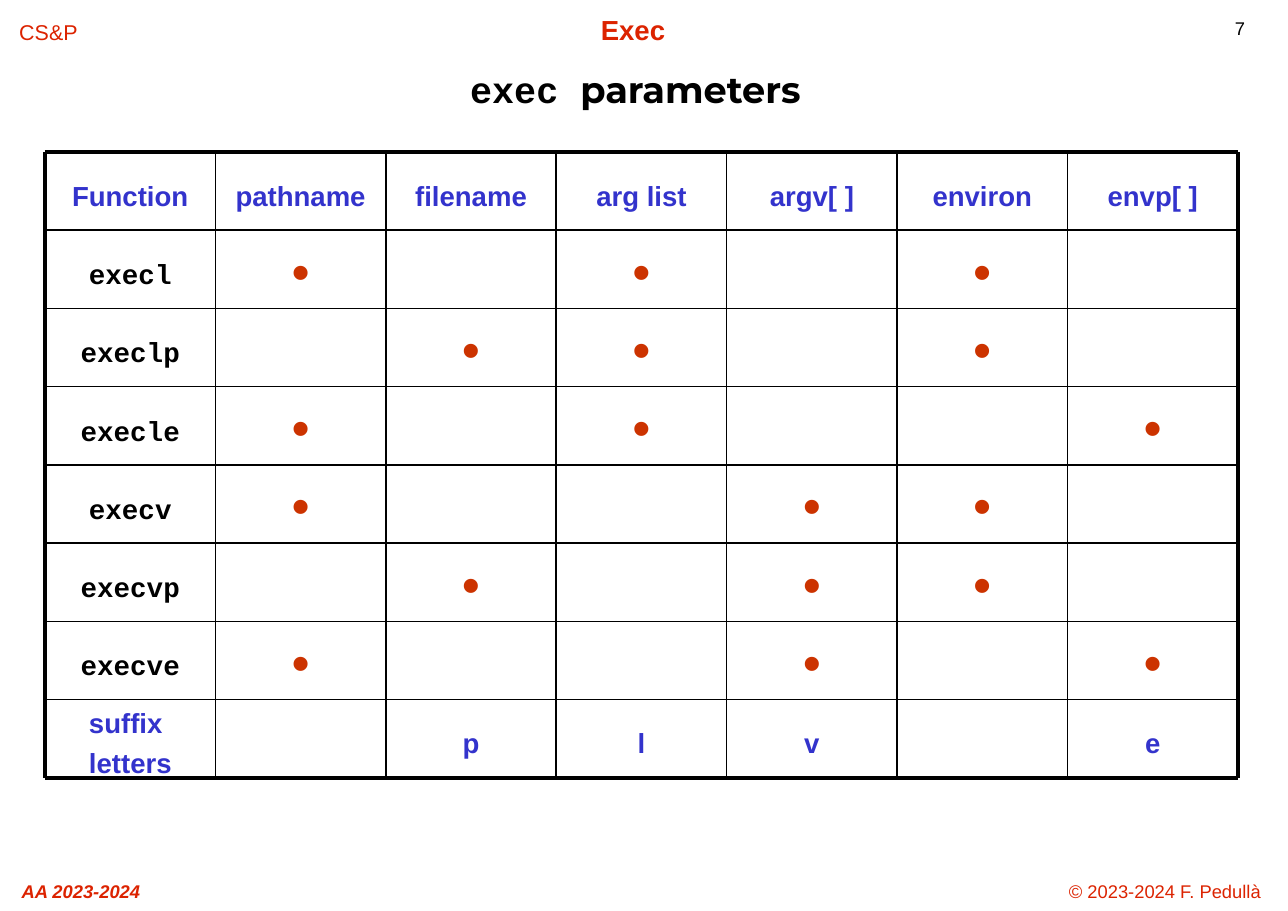
from typing import NamedTuple

from lxml.etree import SubElement
from pptx import Presentation
from pptx.dml.color import RGBColor
from pptx.enum.shapes import MSO_CONNECTOR
from pptx.enum.text import MSO_ANCHOR, PP_ALIGN
from pptx.oxml.ns import qn
from pptx.util import Emu, Pt

SCALE = 914400 / 110.2
BLACK, BLUE, RUST, RED = "000000", "3333CC", "CC3300", "DC2300"
LEFT, TOP, WIDTH, HEIGHT = 45, 152, 1193, 626
NO_GRID_STYLE = "{2D5ABB26-0587-4C30-8999-92F81FD0307C}"


class Label(NamedTuple):
    text: str
    left: int
    top: int
    width: int
    size: int
    color: str = RED
    align: PP_ALIGN = PP_ALIGN.CENTER
    bold: bool = False
    italic: bool = False


class CellStyle(NamedTuple):
    """Margins are left, top, right and bottom in px."""
    size: float
    color: str
    font: str = "Arial"
    spacing: float | Pt = Pt(26.2)
    margins: tuple[int, int, int, int] = (4, 6, 4, 4)
    align: PP_ALIGN = PP_ALIGN.CENTER


LABELS = [
    Label("7", 1235, 11, 40, 12, BLACK, PP_ALIGN.LEFT),
    Label("© 2023-2024 F. Pedullà", 1042, 874, 246, 12),
    Label("AA 2023-2024", 0, 874, 162, 12, bold=True, italic=True),
    Label("Exec", 457, 7, 352, 18, bold=True),
    Label("CS&P", 7, 13, 83, 14),
]

HEADING = CellStyle(18, BLUE)
LETTER = CellStyle(18, BLUE, margins=(4, 3, 4, 4))
SUFFIX = CellStyle(18, BLUE, margins=(44, 0, 36, 0), align=PP_ALIGN.LEFT)
FUNCTION = CellStyle(18, BLACK, "Courier New", 1.23, (4, 13, 4, 4))
DOT = CellStyle(32, RUST, spacing=1.0, margins=(4, 10, 4, 4))

COLUMNS = ["Function", "pathname", "filename", "arg list", "argv[ ]", "environ", "envp[ ]"]
PARAMETERS = {
    "execl": ("pathname", "arg list", "environ"),
    "execlp": ("filename", "arg list", "environ"),
    "execle": ("pathname", "arg list", "envp[ ]"),
    "execv": ("pathname", "argv[ ]", "environ"),
    "execvp": ("filename", "argv[ ]", "environ"),
    "execve": ("pathname", "argv[ ]", "envp[ ]"),
}
SUFFIXES = ["suffix letters", "", "p", "l", "v", "", "e"]


def px(n: float) -> Emu:
    return Emu(round(n * SCALE))


def rgb(color: str) -> RGBColor:
    return RGBColor.from_string(color)


def set_format(target, **values) -> None:
    for name, value in values.items():
        setattr(target, name, value)


def add_run(p, text: str, color: str, **font) -> None:
    r = p.add_run()
    r.text = text
    set_format(r.font, **font)
    r.font.color.rgb = rgb(color)


def add_label(s, label: Label) -> None:
    tf = s.shapes.add_textbox(px(label.left), px(label.top),
                              px(label.width), px(36)).text_frame
    set_format(tf, word_wrap=True, margin_left=0, margin_right=0,
               margin_top=px(6), margin_bottom=px(6))
    p = tf.paragraphs[0]
    set_format(p, alignment=label.align, line_spacing=1.01)
    add_run(p, label.text, label.color, name="Arial", size=Pt(label.size),
            bold=label.bold, italic=label.italic)


def add_title(s) -> None:
    title = s.shapes.title
    set_format(title, left=px(210), top=px(58), width=px(851), height=px(69))
    tf = title.text_frame
    set_format(tf, vertical_anchor=MSO_ANCHOR.MIDDLE, word_wrap=True)
    p = tf.paragraphs[0]
    set_format(p, alignment=PP_ALIGN.CENTER, line_spacing=0.85)
    for text, font in (("exec ", "Courier New"), ("parameters", "Montserrat")):
        add_run(p, text, BLACK, name=font, size=Pt(24), bold=True)


def fill_cell(cell, text: str, style: CellStyle) -> None:
    cell.fill.background()
    cell.vertical_anchor = MSO_ANCHOR.MIDDLE
    left, top, right, bottom = map(px, style.margins)
    set_format(cell, margin_left=left, margin_top=top,
               margin_right=right, margin_bottom=bottom)
    if text:
        p = cell.text_frame.paragraphs[0]
        set_format(p, alignment=style.align, line_spacing=style.spacing)
        add_run(p, text, style.color, name=style.font, size=Pt(style.size), bold=True)


def table_rows() -> list[list[tuple[str, CellStyle]]]:
    rows = [[(name, HEADING) for name in COLUMNS]]
    for function, used in PARAMETERS.items():
        dots = [("•" if name in used else "", DOT) for name in COLUMNS[1:]]
        rows.append([(function, FUNCTION), *dots])
    rows.append([(SUFFIXES[0], SUFFIX), *((text, LETTER) for text in SUFFIXES[1:])])
    return rows


def add_rule(s, x1: float, y1: float, x2: float, y2: float, is_outer: bool) -> None:
    line = s.shapes.add_connector(MSO_CONNECTOR.STRAIGHT, px(x1), px(y1), px(x2), px(y2))
    line.line.width = Pt(2.25 if is_outer else 1)
    line.line.color.rgb = rgb(BLACK)
    SubElement(line._element.spPr, qn("a:effectLst"))


def add_grid(s, n_rows: int, n_cols: int) -> None:
    for i in range(n_rows + 1):
        y = TOP + HEIGHT * i / n_rows
        add_rule(s, LEFT, y, LEFT + WIDTH, y, i in (0, n_rows))
    for j in range(n_cols + 1):
        x = LEFT + WIDTH * j / n_cols
        add_rule(s, x, TOP, x, TOP + HEIGHT, j in (0, n_cols))


def add_parameter_table(s) -> None:
    rows = table_rows()
    table = s.shapes.add_table(len(rows), len(COLUMNS), px(LEFT), px(TOP),
                               px(WIDTH), px(HEIGHT)).table
    set_format(table, first_row=False, horz_banding=False)
    table._tbl.tblPr.find(qn("a:tableStyleId")).text = NO_GRID_STYLE
    for i, row in enumerate(rows):
        for j, (text, style) in enumerate(row):
            fill_cell(table.cell(i, j), text, style)
    add_grid(s, len(rows), len(COLUMNS))


def main() -> None:
    prs = Presentation()
    set_format(prs, slide_width=px(1288), slide_height=px(911))
    s = prs.slides.add_slide(prs.slide_layouts[5])
    for label in LABELS:
        add_label(s, label)
    add_parameter_table(s)
    add_title(s)
    prs.save("out.pptx")


if __name__ == "__main__":
    main()
